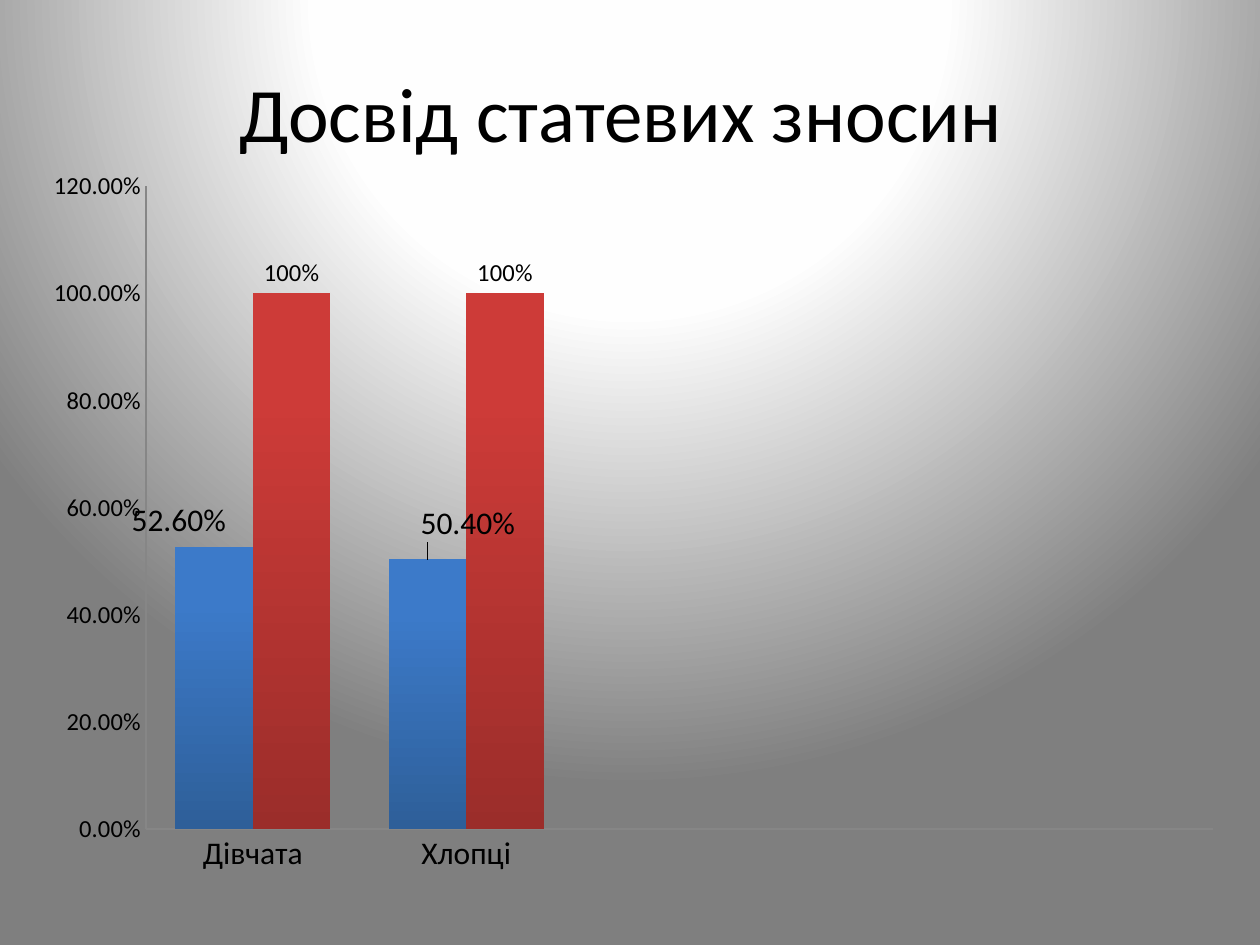
from lxml import etree
from pptx import Presentation
from pptx import util as u
from pptx.chart.data import CategoryChartData
from pptx.dml.color import RGBColor
from pptx.enum import chart as ch
from pptx.enum import text
from pptx.oxml import parse_xml
from pptx.oxml.ns import nsdecls, qn

FONT = "Calibri"
CATEGORIES = ["Дівчата", "Хлопці", "", "", ""]
# label_shifts: offsets of single labels as fractions of the chart area
SERIES = [
    {"name": "Series 1", "values": (0.526, 0.504, None, None, None),
     "bottom": "2E5F99", "top": "3C7AC9", "size": 18, "format": "0.00%",
     "label_shifts": [(-0.028, -0.004), (0.032, -0.015)]},
    {"name": "Series 2", "values": (1, 1, None, None, None),
     "bottom": "9B2D2A", "top": "CD3B38", "size": 14, "format": "0%",
     "label_shifts": []},
]


def rgb(value):
    return RGBColor.from_string(value)


def manual_layout(**values):
    """Return a c:layout element with the given settings in order."""
    layout = etree.Element(qn("c:layout"))
    manual = etree.SubElement(layout, qn("c:manualLayout"))
    for key, value in values.items():
        etree.SubElement(manual, qn(f"c:{key}")).set("val", str(value))
    return layout


def paint_background(slide):
    stops = "".join(
        f'<a:gs pos="{percent * 1000}"><a:srgbClr val="{color}"/></a:gs>'
        for percent, color in [(0, "FFFFFF"), (40, "FEFEFE"), (100, "7F7F7F")])
    background = parse_xml(
        f'<p:bg {nsdecls("p", "a")}><p:bgPr><a:gradFill rotWithShape="1">'
        f'<a:gsLst>{stops}</a:gsLst><a:path path="circle">'
        '<a:fillToRect l="50000" t="-80000" r="50000" b="180000"/></a:path>'
        '</a:gradFill><a:effectLst/></p:bgPr></p:bg>')
    slide.element.cSld.insert(0, background)


def place_title(slide, wording, left, top, width, height):
    title = slide.shapes.title
    for key, value in {"left": left, "top": top, "width": width, "height": height}.items():
        setattr(title, key, value)
    frame = title.text_frame
    frame.text = wording
    for key, value in {"word_wrap": True, "vertical_anchor": text.MSO_ANCHOR.TOP,
                       "auto_size": text.MSO_AUTO_SIZE.SHAPE_TO_FIT_TEXT}.items():
        setattr(frame, key, value)
    paragraph = frame.paragraphs[0]
    paragraph.alignment = text.PP_ALIGN.LEFT
    run = paragraph.runs[0]
    run.font.name, run.font.size = FONT, u.Pt(44)
    run.font.color.rgb = rgb("000000")
    run.font.element.insert(0, parse_xml(
        f'<a:ln {nsdecls("a")} w="9525"><a:solidFill><a:srgbClr val="002060"/>'
        '</a:solidFill></a:ln>')) if hasattr(run.font, "element") else \
        run._r.get_or_add_rPr().insert(0, parse_xml(
            f'<a:ln {nsdecls("a")} w="9525"><a:solidFill>'
            '<a:srgbClr val="002060"/></a:solidFill></a:ln>'))


def format_axis(axis, size):
    for key, value in {"has_major_gridlines": False,
                       "major_tick_mark": ch.XL_TICK_MARK.NONE,
                       "minor_tick_mark": ch.XL_TICK_MARK.NONE}.items():
        setattr(axis, key, value)
    axis.tick_labels.font.size = u.Pt(size)
    axis.format.line.color.rgb = rgb("868686")
    axis.format.line.width = u.Pt(0.75)


def shift_label(point, shift, size, number_format):
    label = point.data_label
    label.font.size = u.Pt(size)
    label.position = ch.XL_LABEL_POSITION.OUTSIDE_END


def format_series(series, settings):
    fill = series.format.fill
    fill.gradient()
    fill.gradient_angle = 90
    for stop, position, part in zip(fill.gradient_stops, (0, 0.8), ("bottom", "top")):
        stop.position = position
        stop.color.rgb = rgb(settings[part])

    labels = series.data_labels
    for key, value in {"show_value": True, "number_format": settings["format"],
                       "number_format_is_linked": False,
                       "position": ch.XL_LABEL_POSITION.OUTSIDE_END}.items():
        setattr(labels, key, value)
    labels.font.size = u.Pt(settings["size"])

    for index, _ in enumerate(settings["label_shifts"]):
        shift_label(series.points[index], _, settings["size"], settings["format"])
    shifted = series._element.findall(f'{qn("c:dLbls")}/{qn("c:dLbl")}')
    for label, (x, y) in zip(shifted, settings["label_shifts"]):
        number_format = etree.Element(
            qn("c:numFmt"), formatCode=settings["format"], sourceLinked="0")
        label.insert(1, manual_layout(x=x, y=y))
        label.insert(2, number_format)


def place_chart(slide, left, top, width, height):
    data = CategoryChartData(number_format="0.00%")
    data.categories = CATEGORIES
    for settings in SERIES:
        data.add_series(settings["name"], settings["values"])
    chart = slide.shapes.add_chart(
        ch.XL_CHART_TYPE.COLUMN_CLUSTERED, left, top, width, height, data).chart
    chart.has_title = chart.has_legend = False
    for key, value in {"name": FONT, "size": u.Pt(10)}.items():
        setattr(chart.font, key, value)
    chart.font.color.rgb = rgb("000000")

    plot = chart.plots[0]
    for key, value in {"gap_width": 75, "overlap": 0, "vary_by_categories": False}.items():
        setattr(plot, key, value)
    for series, settings in zip(plot.series, SERIES):
        format_series(series, settings)

    format_axis(chart.category_axis, 18)
    format_axis(chart.value_axis, 14)
    for key, value in {"minimum_scale": 0, "maximum_scale": 1.2, "major_unit": 0.2}.items():
        setattr(chart.value_axis, key, value)
    chart.value_axis.tick_labels.number_format = "0.00%"
    chart.value_axis.tick_labels.number_format_is_linked = False

    area = chart._chartSpace.chart.plotArea
    for layout in area.findall(qn("c:layout")):
        area.remove(layout)
    area.insert(0, manual_layout(layoutTarget="inner", xMode="edge", yMode="edge",
                                 x=0.116, y=0.024, w=0.847, h=0.827))


def main():
    deck = Presentation()
    deck.slide_width, deck.slide_height = u.Cm(25.4), u.Cm(19.05)
    slide = deck.slides.add_slide(deck.slide_layouts[5])
    paint_background(slide)
    place_chart(slide, u.Cm(0), u.Cm(3.38), u.Cm(25.4), u.Cm(15.67))
    place_title(slide, "Досвід статевих зносин",
                u.Cm(4.57), u.Cm(1.19), u.Cm(18.06), u.Cm(2.13))
    deck.save("out.pptx")


if __name__ == "__main__":
    main()
